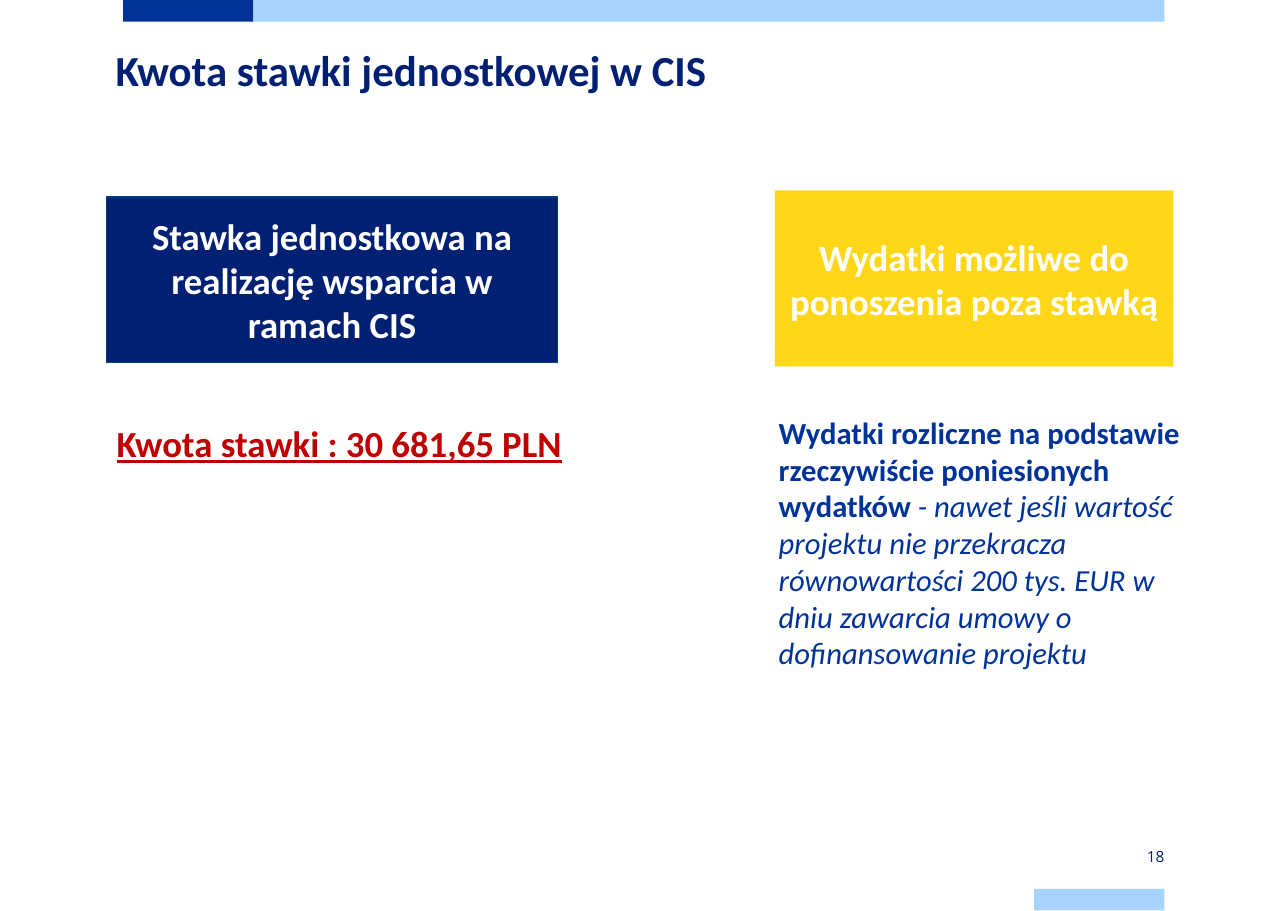
import pptx
import pptx.dml.color
import pptx.enum.shapes
import pptx.enum.text
import pptx.util
from pptx.util import Cm

NAVY, BLUE, SKY = "002073", "003399", "A6D3FF"
YELLOW, RED, WHITE = "FFD618", "C00000", "FFFFFF"
ALIGN = pptx.enum.text.PP_ALIGN
ANCHOR = pptx.enum.text.MSO_ANCHOR


def color(hex_string):
    return pptx.dml.color.RGBColor.from_string(hex_string)


def style(font, size, hex_string, bold=True, name="Calibri"):
    font.name = name
    font.size = pptx.util.Pt(size)
    font.bold = bold
    font.color.rgb = color(hex_string)


deck = pptx.Presentation()
deck.slide_width, deck.slide_height = Cm(29.69), Cm(21.01)
page = deck.slides.add_slide(deck.slide_layouts[5])

# Bars and headed boxes: left, top, width, height, fill, outline, text
rectangles = [
    (2.84, 0, 3, 0.5, BLUE, None, ""),
    (5.84, 0, 21, 0.5, SKY, None, ""),
    (23.84, 20.5, 3, 0.5, SKY, None, ""),
    (2.46, 4.55, 10.39, 3.81, NAVY, "003C82",
     "Stawka jednostkowa na realizację wsparcia w ramach CIS"),
    (17.86, 4.39, 9.19, 4.06, YELLOW, None,
     "Wydatki możliwe do ponoszenia poza stawką"),
]
for left, top, width, height, fill, outline, text in rectangles:
    box = page.shapes.add_shape(
        pptx.enum.shapes.MSO_SHAPE.RECTANGLE,
        Cm(left), Cm(top), Cm(width), Cm(height))
    box.shadow.inherit = False
    box.fill.solid()
    box.fill.fore_color.rgb = color(fill)
    if outline:
        box.line.color.rgb = color(outline)
        box.line.width = pptx.util.Pt(1)
    else:
        box.line.fill.background()
    if text:
        box.text_frame.text = text
        box.text_frame.word_wrap = True
        box.text_frame.vertical_anchor = ANCHOR.MIDDLE
        para = box.text_frame.paragraphs[0]
        para.alignment = ALIGN.CENTER
        style(para.runs[0].font, 24, WHITE)

# Title
title = page.shapes.title
title.left, title.top, title.width, title.height = Cm(2.41), Cm(0.89), Cm(14.3), Cm(1.45)
title.text_frame.text = "Kwota stawki jednostkowej w CIS"
title.text_frame.word_wrap = False
title.text_frame.auto_size = pptx.enum.text.MSO_AUTO_SIZE.NONE
title.text_frame.vertical_anchor = ANCHOR.TOP
para = title.text_frame.paragraphs[0]
para.alignment = ALIGN.LEFT
style(para.runs[0].font, 28, NAVY)

# Unit rate
rate = page.shapes.add_textbox(Cm(2.44), Cm(9.7), Cm(10.85), Cm(1.17))
rate.text_frame.text = "Kwota stawki : 30 681,65 PLN"
rate.text_frame.word_wrap = False
para = rate.text_frame.paragraphs[0]
para.line_spacing = 0.9
style(para.runs[0].font, 24, RED)
para.runs[0].font.underline = True

# Expenses outside the rate
expenses = page.shapes.add_textbox(Cm(17.7), Cm(9.42), Cm(9.83), Cm(6.25))
expenses.text_frame.word_wrap = True
para = expenses.text_frame.paragraphs[0]
para.text = "Wydatki rozliczne na podstawie rzeczywiście poniesionych wydatków "
style(para.runs[0].font, 20, BLUE)
span = para.add_run()
span.text = ("- nawet jeśli wartość projektu nie przekracza równowartości "
             "200 tys. EUR w dniu zawarcia umowy o dofinansowanie projektu")
style(span.font, 20, BLUE, bold=False)
span.font.italic = True

# Page number
number = page.shapes.add_textbox(Cm(23.84), Cm(19.5), Cm(3), Cm(0.5))
frame = number.text_frame
frame.text = "18"
frame.margin_left = frame.margin_right = 0
frame.margin_top = frame.margin_bottom = Cm(0.2)
frame.word_wrap = True
frame.vertical_anchor = ANCHOR.MIDDLE
para = frame.paragraphs[0]
para.alignment = ALIGN.RIGHT
style(para.runs[0].font, 10, NAVY, bold=False, name="Open Sans")

deck.save("out.pptx")
